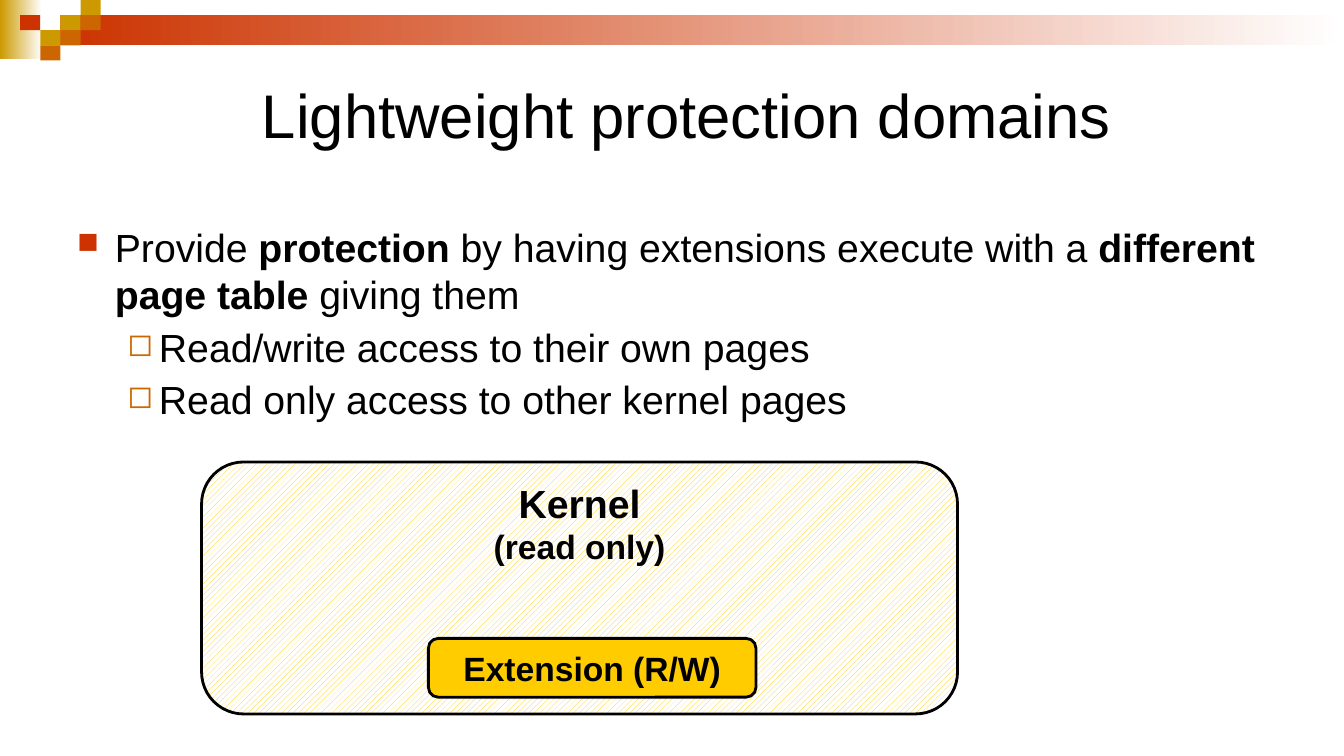
from lxml import etree
from pptx import Presentation
from pptx.dml.color import RGBColor
from pptx.enum.dml import MSO_PATTERN
from pptx.enum.shapes import MSO_SHAPE as SHAPE
from pptx.enum.text import MSO_ANCHOR as ANCHOR, PP_ALIGN as ALIGN
from pptx.oxml.ns import qn
from pptx.util import Pt

RED, ORANGE, OCHRE, YELLOW = "CC3300", "CC6600", "CC9900", "FFCC00"
BLACK, WHITE = "000000", "FFFFFF"
TILE_W, TILE_H = 14.4, 10.8
TILES = [(3, 1, OCHRE), (4, 0, OCHRE), (4, 1, ORANGE), (2, 2, OCHRE),
         (1, 1, RED), (3, 2, ORANGE), (2, 3, ORANGE)]
BULLETS = [
    ("■", RED, 75, 27, 27, 5.6, [
        ("Provide ", False), ("protection", True),
        (" by having extensions execute with a ", False),
        ("different page table ", True), ("giving them", False)]),
    ("◻", ORANGE, 80, 58.5, 22.5, 4, [("Read/write access to their own pages", False)]),
    ("◻", ORANGE, 80, 58.5, 22.5, 4, [("Read only access to other kernel pages", False)]),
]


def rgb(color):
    """Turn a hex string into a colour."""
    return RGBColor.from_string(color)


def add_run(p, text, size, bold=False):
    """Add one black Arial run to a paragraph."""
    r = p.add_run()
    r.text = text
    r.font.name, r.font.size, r.font.bold = "Arial", Pt(size), bold
    r.font.color.rgb = rgb(BLACK)


def add_box(s, kind, x, y, w, h, color=None):
    """Add a shape without line or shadow, solid if a colour is given."""
    sp = s.shapes.add_shape(kind, Pt(x), Pt(y), Pt(w), Pt(h))
    sp.shadow.inherit = False
    sp.line.fill.background()
    if color:
        sp.fill.solid()
        sp.fill.fore_color.rgb = rgb(color)
    return sp


def add_fade(s, x, y, w, h, color):
    """Add a bar that fades from a colour to white, left to right."""
    fill = add_box(s, SHAPE.RECTANGLE, x, y, w, h).fill
    fill.gradient()
    fill.gradient_angle = 0
    for stop, shade in zip(fill.gradient_stops, (color, WHITE)):
        stop.color.rgb = rgb(shade)


def add_domain(s, x, y, w, h, lines, anchor, color=None):
    """Add an outlined rounded box with centred bold lines of text."""
    sp = add_box(s, SHAPE.ROUNDED_RECTANGLE, x, y, w, h, color)
    sp.line.color.rgb = rgb(BLACK)
    sp.line.width = Pt(2)
    tf = sp.text_frame
    tf.vertical_anchor = anchor
    p = tf.paragraphs[0]
    p.alignment = ALIGN.CENTER
    for i, (text, size) in enumerate(lines):
        if i:
            p.add_line_break()
        add_run(p, text, size, True)
    return sp


def add_text(s, x, y, w, h):
    """Add a wrapping text box."""
    sp = s.shapes.add_textbox(Pt(x), Pt(y), Pt(w), Pt(h))
    sp.text_frame.word_wrap = True
    return sp


def set_bullet(p, char, color, percent, left, hang):
    """Give a paragraph a coloured bullet with a hanging indent."""
    pPr = p._p.get_or_add_pPr()
    pPr.set("marL", str(Pt(left)))
    pPr.set("indent", str(-Pt(hang)))
    clr = etree.SubElement(pPr, qn("a:buClr"))
    etree.SubElement(clr, qn("a:srgbClr"), val=color)
    etree.SubElement(pPr, qn("a:buSzPct"), val=str(percent * 1000))
    etree.SubElement(pPr, qn("a:buChar"), char=char)


def add_header(s):
    """Draw the fading bars and the tiles at the top."""
    add_fade(s, 0, 0, 30, 42, OCHRE)
    add_fade(s, 43.2, TILE_H, 916.8, 21.6, RED)
    for col, row, color in TILES:
        add_box(s, SHAPE.RECTANGLE, col * TILE_W, row * TILE_H, TILE_W, TILE_H, color)


def add_title(s, text):
    """Add the title on its white ground."""
    sp = add_text(s, 180, 36, 660, 90)
    sp.fill.solid()
    sp.fill.fore_color.rgb = rgb(WHITE)
    sp.text_frame.vertical_anchor = ANCHOR.MIDDLE
    add_run(sp.text_frame.paragraphs[0], text, 44)


def add_bullets(s):
    """Add the bulleted body text."""
    tf = add_text(s, 48, 156, 864, 306).text_frame
    for i, (char, color, percent, left, hang, before, runs) in enumerate(BULLETS):
        p = tf.add_paragraph() if i else tf.paragraphs[0]
        p.space_before = Pt(before)
        set_bullet(p, char, color, percent, left, hang)
        for text, bold in runs:
            add_run(p, text, 28, bold)


def main():
    """Build and save the slide."""
    prs = Presentation()
    prs.slide_width, prs.slide_height = Pt(960), Pt(540)
    s = prs.slides.add_slide(prs.slide_layouts[6])
    add_header(s)
    add_title(s, "Lightweight protection domains")
    add_bullets(s)
    kernel = add_domain(s, 144, 330, 540, 180,
                        [("Kernel", 28), ("(read only)", 24)], ANCHOR.TOP)
    kernel.fill.patterned()
    kernel.fill.pattern = MSO_PATTERN.WIDE_UPWARD_DIAGONAL
    kernel.fill.fore_color.rgb = rgb(YELLOW)
    kernel.fill.back_color.rgb = rgb(WHITE)
    add_domain(s, 306, 456, 234, 42, [("Extension (R/W)", 24)], ANCHOR.MIDDLE, YELLOW)
    prs.save("out.pptx")


if __name__ == "__main__":
    main()
